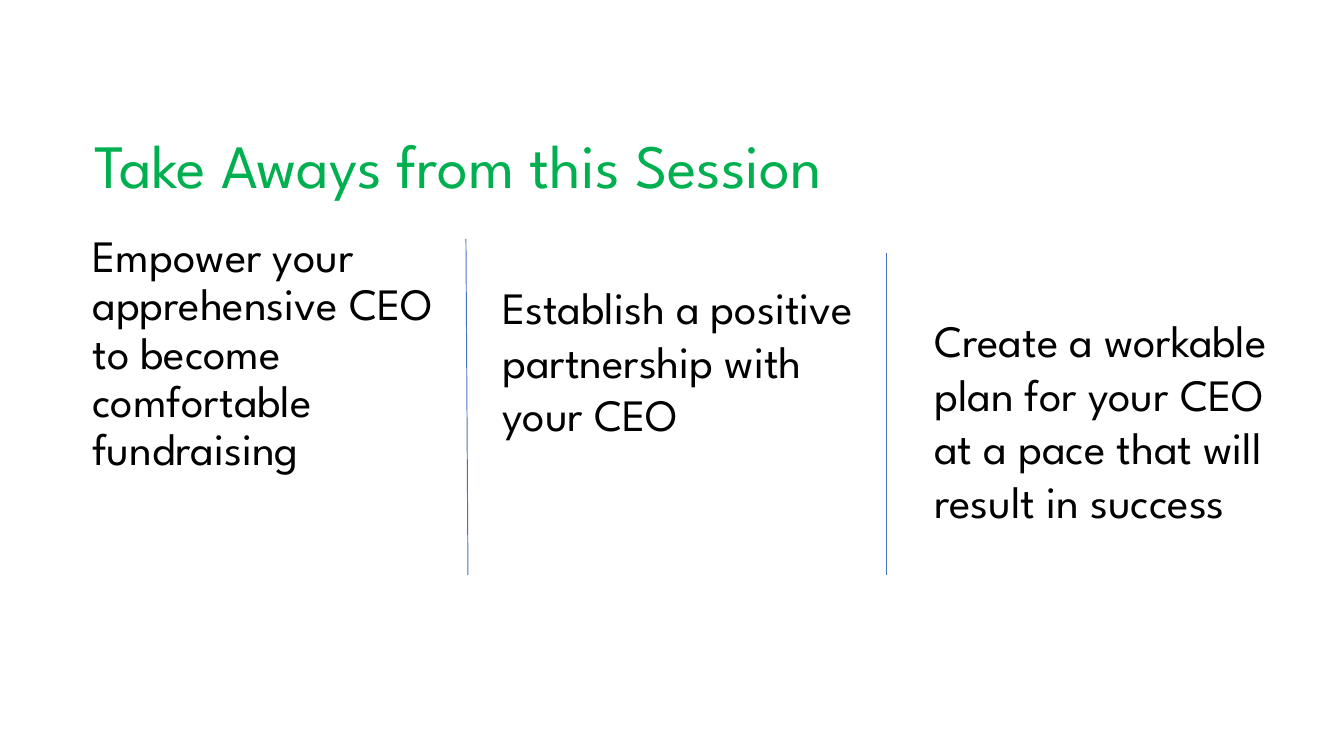
from typing import NamedTuple

from lxml.etree import SubElement
from pptx import Presentation
from pptx.dml.color import RGBColor
from pptx.enum.shapes import MSO_CONNECTOR as CONN
from pptx.enum.text import MSO_ANCHOR as ANCHOR, MSO_AUTO_SIZE as AUTO, PP_ALIGN as ALIGN
from pptx.oxml.ns import qn
from pptx.util import Emu, Pt

GREEN = RGBColor(0x00, 0xB0, 0x50)
BLACK = RGBColor(0x00, 0x00, 0x00)
BLUE = RGBColor(0x44, 0x72, 0xC4)
FONT = "League Spartan"
EMU_PER_PX = 914400 / 134.4


class Box(NamedTuple):
    left: int
    top: int
    width: int
    height: int


class TakeAway(NamedTuple):
    box: Box
    text: str


class Divider(NamedTuple):
    x1: int
    y1: int
    x2: int
    y2: int


TITLE = TakeAway(Box(81, 129, 1158, 79), "Take Aways from this Session")
FIRST = TakeAway(Box(79, 227, 396, 363),
                 "Empower your apprehensive CEO to become comfortable fundraising")
OTHERS = [
    TakeAway(Box(489, 273, 406, 231), "Establish a positive partnership with your CEO"),
    TakeAway(Box(921, 306, 371, 285),
             "Create a workable plan for your CEO at a pace that will result in success"),
]
DIVIDERS = [Divider(466, 239, 468, 575), Divider(886, 253, 886, 575)]

TITLE_FONT = {"name": FONT, "size": Pt(33)}
BODY_FONT = {"name": FONT, "size": Pt(24)}


def px(n: int) -> Emu:
    """Turn pixels into EMU."""
    return Emu(round(n * EMU_PER_PX))


def set_all(obj, values: dict) -> None:
    """Set each named attribute on an object."""
    for name, value in values.items():
        setattr(obj, name, value)


def write(sp, item: TakeAway, font: dict, color: RGBColor, spacing: float,
          anchor: ANCHOR = ANCHOR.TOP, auto: AUTO = AUTO.NONE) -> None:
    """Place a shape and fill it with one formatted paragraph."""
    set_all(sp, {name: px(n) for name, n in item.box._asdict().items()})
    tf = sp.text_frame
    set_all(tf, {"word_wrap": True, "auto_size": auto, "vertical_anchor": anchor})
    p = tf.paragraphs[0]
    set_all(p, {"alignment": ALIGN.LEFT, "line_spacing": spacing, "space_before": Pt(0)})
    r = p.add_run()
    r.text = item.text
    set_all(r.font, font)
    r.font.color.rgb = color


def remove_bullet(sp) -> None:
    """Make the first paragraph plain and flush left."""
    pPr = sp.text_frame.paragraphs[0]._p.get_or_add_pPr()
    pPr.set("marL", "0")
    pPr.set("indent", "0")
    SubElement(pPr, qn("a:buNone"))


def add_divider(s, d: Divider) -> None:
    """Draw a thin line between two columns."""
    line = s.shapes.add_connector(CONN.STRAIGHT, *map(px, d))
    line.line.width = Pt(0.5)
    line.line.color.rgb = BLUE
    SubElement(line._element.spPr, qn("a:effectLst"))


def main() -> None:
    """Build the slide and save it."""
    prs = Presentation()
    set_all(prs, {"slide_width": px(1344), "slide_height": px(756)})
    s = prs.slides.add_slide(prs.slide_layouts[1])
    title, body = s.placeholders
    write(title, TITLE, TITLE_FONT, GREEN, 0.9, ANCHOR.MIDDLE)
    write(body, FIRST, BODY_FONT, BLACK, 0.9)
    remove_bullet(body)
    for item in OTHERS:
        sp = s.shapes.add_textbox(*map(px, item.box))
        write(sp, item, BODY_FONT, BLACK, 1.0, auto=AUTO.SHAPE_TO_FIT_TEXT)
    for d in DIVIDERS:
        add_divider(s, d)
    prs.save("out.pptx")


if __name__ == "__main__":
    main()
